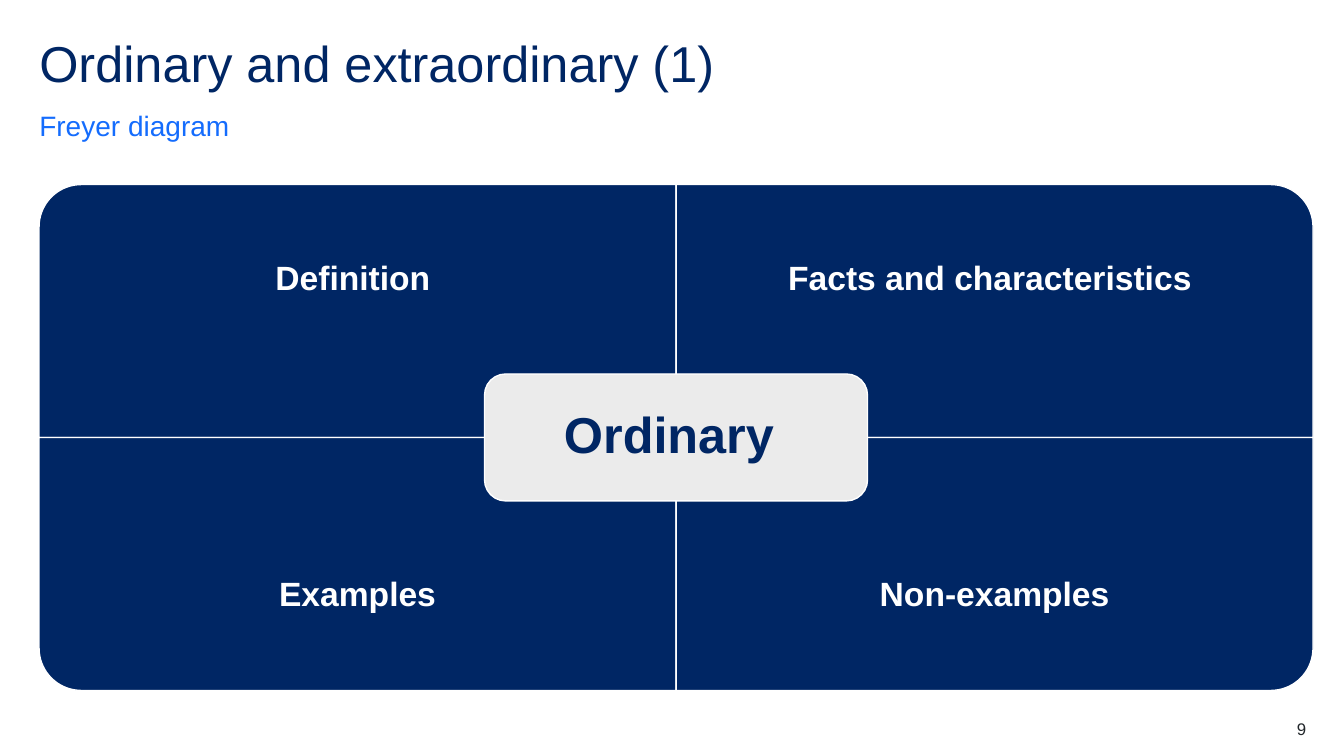
from dataclasses import dataclass
from math import cos, radians, sin

from pptx import Presentation
from pptx.dml.color import RGBColor
from pptx.enum import shapes, text
from pptx.util import Pt

NAVY, BLUE, WHITE, GREY, INK = "002664", "146CFD", "FFFFFF", "EBEBEB", "22272B"
CENTRE_X, CENTRE_Y = 482.9, 312.5
CELL_WIDTH, CELL_HEIGHT, RADIUS = 455, 180.7, 30.2
HUB_WIDTH, HUB_HEIGHT, HUB_INSET = 273.6, 90.7, 17.3
OUTER_INSET, INNER_INSET = 23.8, 69.1
LEFT, CENTER, RIGHT = text.PP_ALIGN.LEFT, text.PP_ALIGN.CENTER, text.PP_ALIGN.RIGHT
TOP, MIDDLE, BOTTOM = (text.MSO_ANCHOR.TOP, text.MSO_ANCHOR.MIDDLE,
                       text.MSO_ANCHOR.BOTTOM)


@dataclass
class Label:
    wording: str
    size: float
    color: str
    bold: bool = False
    align: text.PP_ALIGN = LEFT
    anchor: text.MSO_ANCHOR = TOP
    spacing: float = 1.0
    after: float = 0
    insets: tuple[float, float, float, float] = (0, 0, 0, 0)  # left, top, right, bottom


@dataclass
class Quadrant:
    wording: str
    side_x: int  # -1 left, 1 right
    side_y: int  # -1 top, 1 bottom
    right_inset: float


QUADRANTS = [
    Quadrant("Definition", -1, -1, 30.5),
    Quadrant("Facts and characteristics", 1, -1, 30.5),
    Quadrant("Examples", -1, 1, OUTER_INSET),
    Quadrant("Non-examples", 1, 1, OUTER_INSET),
]


def rgb(color: str) -> RGBColor:
    return RGBColor.from_string(color)


def write(shape, label: Label) -> None:
    frame = shape.text_frame
    frame.word_wrap = True
    frame.auto_size = text.MSO_AUTO_SIZE.NONE
    frame.vertical_anchor = label.anchor
    (frame.margin_left, frame.margin_top,
     frame.margin_right, frame.margin_bottom) = map(Pt, label.insets)
    paragraph = frame.paragraphs[0]
    paragraph.alignment = label.align
    paragraph.line_spacing = label.spacing
    paragraph.space_before = Pt(0)
    paragraph.space_after = Pt(label.after)
    run = paragraph.add_run()
    run.text = label.wording
    run.font.name = "Arial"
    run.font.size = Pt(label.size)
    run.font.bold = label.bold
    run.font.color.rgb = rgb(label.color)


def paint(shape, fill: str) -> None:
    shape.shadow.inherit = False
    shape.fill.solid()
    shape.fill.fore_color.rgb = rgb(fill)
    shape.line.color.rgb = rgb(WHITE)
    shape.line.width = Pt(1)


def add_text(slide, left: float, top: float, width: float, height: float,
             label: Label) -> None:
    write(slide.shapes.add_textbox(Pt(left), Pt(top), Pt(width), Pt(height)), label)


def add_quadrant(slide, quadrant: Quadrant) -> None:
    """Draw one cell whose outer corner is rounded."""
    side_x, side_y = quadrant.side_x, quadrant.side_y
    outer_x = CENTRE_X + side_x * CELL_WIDTH
    outer_y = CENTRE_Y + side_y * CELL_HEIGHT
    arc = [(outer_x + side_x * RADIUS * (sin(angle) - 1),
            outer_y + side_y * RADIUS * (cos(angle) - 1))
           for angle in map(radians, range(0, 91, 5))]
    points = [(CENTRE_X, outer_y), *arc, (outer_x, CENTRE_Y)]
    builder = slide.shapes.build_freeform(Pt(CENTRE_X), Pt(CENTRE_Y))
    builder.add_line_segments([(Pt(x), Pt(y)) for x, y in points], close=True)
    shape = builder.convert_to_shape()
    paint(shape, NAVY)
    top, bottom = ((OUTER_INSET, INNER_INSET) if side_y < 0
                   else (INNER_INSET, OUTER_INSET))
    write(shape, Label(quadrant.wording, 24, WHITE, True, CENTER, MIDDLE, 0.9,
                       insets=(OUTER_INSET, top, quadrant.right_inset, bottom)))


def main() -> None:
    presentation = Presentation()
    presentation.slide_width, presentation.slide_height = Pt(960), Pt(540)
    slide = presentation.slides.add_slide(presentation.slide_layouts[5])

    # Heading
    title = slide.shapes.title
    title.left, title.top, title.width, title.height = map(Pt, (28.1, 28.1, 793.4, 43.2))
    write(title, Label("Ordinary and extraordinary (1)", 36, NAVY, spacing=0.9))
    add_text(slide, 28.1, 77, 793.4, 24.5,
             Label("Freyer diagram", 20, BLUE, anchor=BOTTOM, spacing=1.5, after=12))

    # Four quadrants around the word
    for quadrant in QUADRANTS:
        add_quadrant(slide, quadrant)
    hub = slide.shapes.add_shape(
        shapes.MSO_SHAPE.ROUNDED_RECTANGLE,
        Pt(CENTRE_X - HUB_WIDTH / 2), Pt(CENTRE_Y - HUB_HEIGHT / 2),
        Pt(HUB_WIDTH), Pt(HUB_HEIGHT))
    paint(hub, GREY)
    write(hub, Label("Ordinary ", 36, NAVY, True, CENTER, MIDDLE, 0.9,
                     insets=(HUB_INSET,) * 4))

    # Page number
    add_text(slide, 876.2, 513.4, 56.9, 14.4, Label("9", 12, INK, align=RIGHT))

    presentation.save("out.pptx")


if __name__ == "__main__":
    main()
